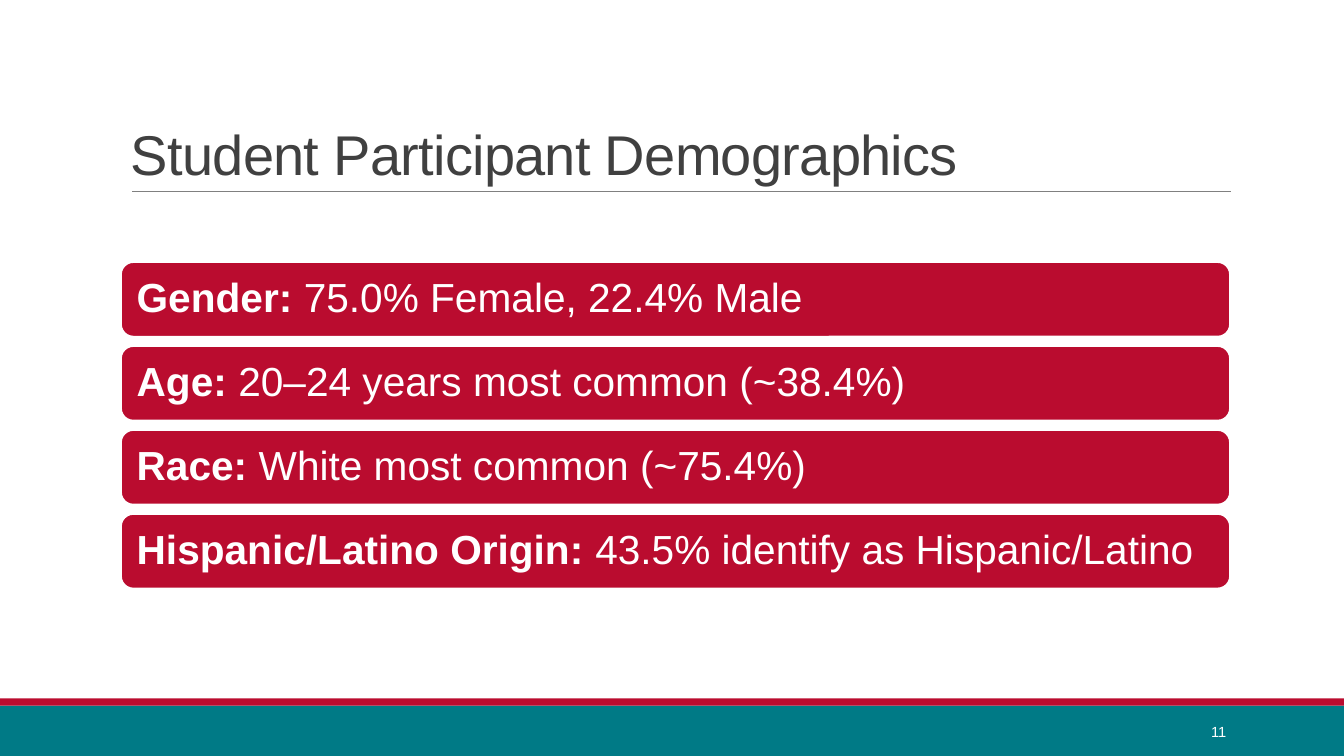
from pptx import Presentation
from pptx.dml.color import RGBColor
from pptx.enum.shapes import MSO_CONNECTOR, MSO_SHAPE
from pptx.enum.text import MSO_ANCHOR, PP_ALIGN
from pptx.oxml.ns import qn
from pptx.util import Inches, Pt
from lxml import etree

RECT, ROUND = MSO_SHAPE.RECTANGLE, MSO_SHAPE.ROUNDED_RECTANGLE
MIDDLE, BOTTOM = MSO_ANCHOR.MIDDLE, MSO_ANCHOR.BOTTOM
LEFT, RIGHT = PP_ALIGN.LEFT, PP_ALIGN.RIGHT

TITLE = "Student Participant Demographics"
FACTS = [
    ("Gender:", " 75.0% Female, 22.4% Male"),
    ("Age:", " 20–24 years most common (~38.4%)"),
    ("Race:", " White most common (~75.4%)"),
    ("Hispanic/Latino Origin:", " 43.5% identify as Hispanic/Latino"),
]
PAGE = "11"
TEAL, RED, WHITE, GREY, DARK = "007A86", "BA0C2F", "FFFFFF", "808080", "404040"

WIDE, HIGH = 13.33, 7.5
EDGE, SPAN = 1.2, 11          # content column
TOP, BAR, STEP = 2.6, 0.74, 0.833
FOOT, STRIPE = 0.5, 0.07
RULE = 1.9


def color(code):
    return RGBColor.from_string(code)


def add_block(slide, kind, box, fill, edge=None):
    shape = slide.shapes.add_shape(kind, *map(Inches, box))
    shape.shadow.inherit = False
    shape.fill.solid()
    shape.fill.fore_color.rgb = color(fill)
    if edge:
        shape.line.color.rgb = color(edge)
        shape.line.width = Pt(1.25)
    else:
        shape.line.fill.background()
    return shape


def set_text(shape, parts, size, ink, anchor, align=LEFT, space=1.0):
    """Write the parts as runs of one paragraph and return the paragraph."""
    frame = shape.text_frame
    frame.word_wrap = True
    frame.vertical_anchor = anchor
    para = frame.paragraphs[0]
    para.alignment = align
    para.line_spacing = space
    for part in parts:
        run = para.add_run()
        run.text = part
        run.font.name = "Arial"
        run.font.size = Pt(size)
        run.font.color.rgb = color(ink)
    return para


def add_label(slide, box, *style):
    return set_text(slide.shapes.add_textbox(*map(Inches, box)), *style)


def add_rule(slide, left, right, top):
    ends = map(Inches, (left, top, right, top))
    rule = slide.shapes.add_connector(MSO_CONNECTOR.STRAIGHT, *ends)
    rule.line.color.rgb = color(GREY)
    rule.line.width = Pt(0.5)
    etree.SubElement(rule._element.spPr, qn("a:effectLst"))


def add_fact(slide, row, fact):
    box = (EDGE, TOP + row * STEP, SPAN, BAR)
    bar = add_block(slide, ROUND, box, RED, WHITE)
    frame = bar.text_frame
    frame.margin_left = frame.margin_right = Inches(0.12)
    frame.margin_top = frame.margin_bottom = Inches(0.12)
    para = set_text(bar, fact, 29, WHITE, MIDDLE, LEFT, 0.9)
    para.runs[0].font.bold = True


def main():
    deck = Presentation()
    deck.slide_width, deck.slide_height = Inches(WIDE), Inches(HIGH)
    slide = deck.slides.add_slide(deck.slide_layouts[6])

    floor = HIGH - FOOT
    add_block(slide, RECT, (0, floor, WIDE, FOOT), TEAL)
    add_block(slide, RECT, (0, floor - STRIPE, WIDE, STRIPE), RED)
    add_rule(slide, EDGE + 0.11, EDGE + SPAN + 0.01, RULE)

    head = add_label(slide, (EDGE, 0.31, SPAN, RULE - 0.31),
                     [TITLE], 40, DARK, BOTTOM, LEFT, 0.85)
    head.runs[0].font._element.set("spc", "-50")
    for row, fact in enumerate(FACTS):
        add_fact(slide, row, fact)
    add_label(slide, (10.83, floor + 0.06, 1.43, 0.4),
              [PAGE], 10.5, WHITE, MIDDLE, RIGHT)

    deck.save("out.pptx")


if __name__ == "__main__":
    main()
